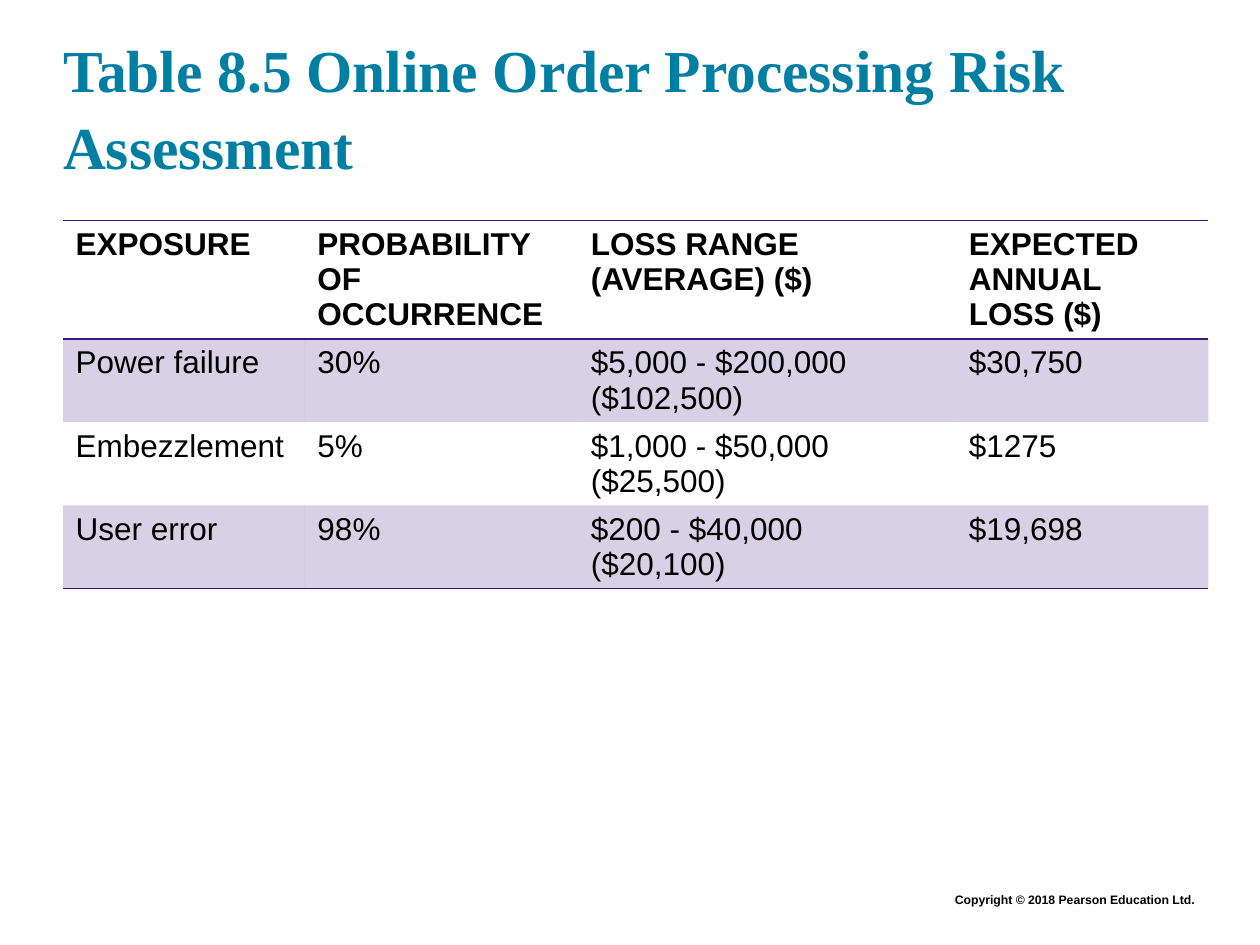
"""Build the online order processing risk assessment slide."""
from lxml import etree
from pptx import Presentation
from pptx.dml import color as c
from pptx.enum import text as t
from pptx.oxml import ns
from pptx.util import Pt

PURPLE = "3C1581"


def rgb(value):
    return c.RGBColor.from_string(value)


def add_border(cell, side, value=None):
    properties = cell._tc.get_or_add_tcPr()
    line = etree.SubElement(properties, ns.qn(f"a:ln{side}"), w=str(Pt(1)))
    fill = etree.SubElement(line, ns.qn("a:solidFill" if value else "a:noFill"))
    if value:
        etree.SubElement(fill, ns.qn("a:srgbClr"), val=value)


presentation = Presentation()
presentation.slide_width, presentation.slide_height = Pt(720), Pt(540)
slide = presentation.slides.add_slide(presentation.slide_layouts[5])

title = slide.shapes.title
title.left, title.top, title.width, title.height = Pt(36), Pt(17.28), Pt(648), Pt(86.4)
frame = title.text_frame
frame.text = "Table 8.5 Online Order Processing Risk Assessment"
frame.word_wrap = True
frame.auto_size = t.MSO_AUTO_SIZE.NONE
frame.vertical_anchor = t.MSO_ANCHOR.BOTTOM
frame.margin_left = frame.margin_right = frame.margin_top = frame.margin_bottom = 0
paragraph = frame.paragraphs[0]
paragraph.alignment = t.PP_ALIGN.LEFT
paragraph.line_spacing = 1.08
font = paragraph.font
font.name, font.size, font.bold = "Times New Roman", Pt(34), True
font.color.rgb = rgb("007FA3")

rows = [
    ["EXPOSURE", "PROBABILITY OF OCCURRENCE", "LOSS RANGE\n(AVERAGE) ($)", "EXPECTED ANNUAL LOSS ($)"],
    ["Power failure", "30%", "$5,000 - $200,000\n($102,500)", "$30,750"],
    ["Embezzlement", "5%", "$1,000 - $50,000\n($25,500)", "$1275"],
    ["User error", "98%", "$200 - $40,000 ($20,100)", "$19,698"],
]
widths = [138.24, 156.24, 216, 144]
last_row = len(rows) - 1
table = slide.shapes.add_table(
    len(rows), len(widths), Pt(36), Pt(126), Pt(sum(widths)), Pt(29.5 * len(rows))
).table
table.first_row = table.horz_banding = False
for column, width in zip(table.columns, widths):
    column.width = Pt(width)

for row_index, row in enumerate(rows):
    for column_index, content in enumerate(row):
        cell = table.cell(row_index, column_index)
        cell.text = content
        for paragraph in cell.text_frame.paragraphs:
            font = paragraph.font
            font.name, font.size, font.bold = "Arial", Pt(18), row_index == 0
            font.color.rgb = rgb("000000")
        add_border(cell, "L")
        add_border(cell, "R")
        add_border(cell, "T", PURPLE if row_index in (0, 1) else None)
        add_border(cell, "B", PURPLE if row_index in (0, last_row) else None)
        if row_index % 2:
            cell.fill.solid()
            cell.fill.fore_color.rgb = rgb(PURPLE)
            shade = cell._tc.tcPr.find(ns.qn("a:solidFill"))[0]
            etree.SubElement(shade, ns.qn("a:alpha"), val="20000")
        else:
            cell.fill.background()

copyright_box = slide.shapes.add_textbox(Pt(126), Pt(506.16), Pt(563.76), Pt(15.84))
frame = copyright_box.text_frame
frame.word_wrap = True
frame.auto_size = t.MSO_AUTO_SIZE.SHAPE_TO_FIT_TEXT
frame.text = "Copyright © 2018 Pearson Education Ltd."
paragraph = frame.paragraphs[0]
paragraph.alignment = t.PP_ALIGN.RIGHT
font = paragraph.font
font.name, font.size, font.bold = "Arial", Pt(7), True
font.color.rgb = rgb("000000")

presentation.save("out.pptx")
